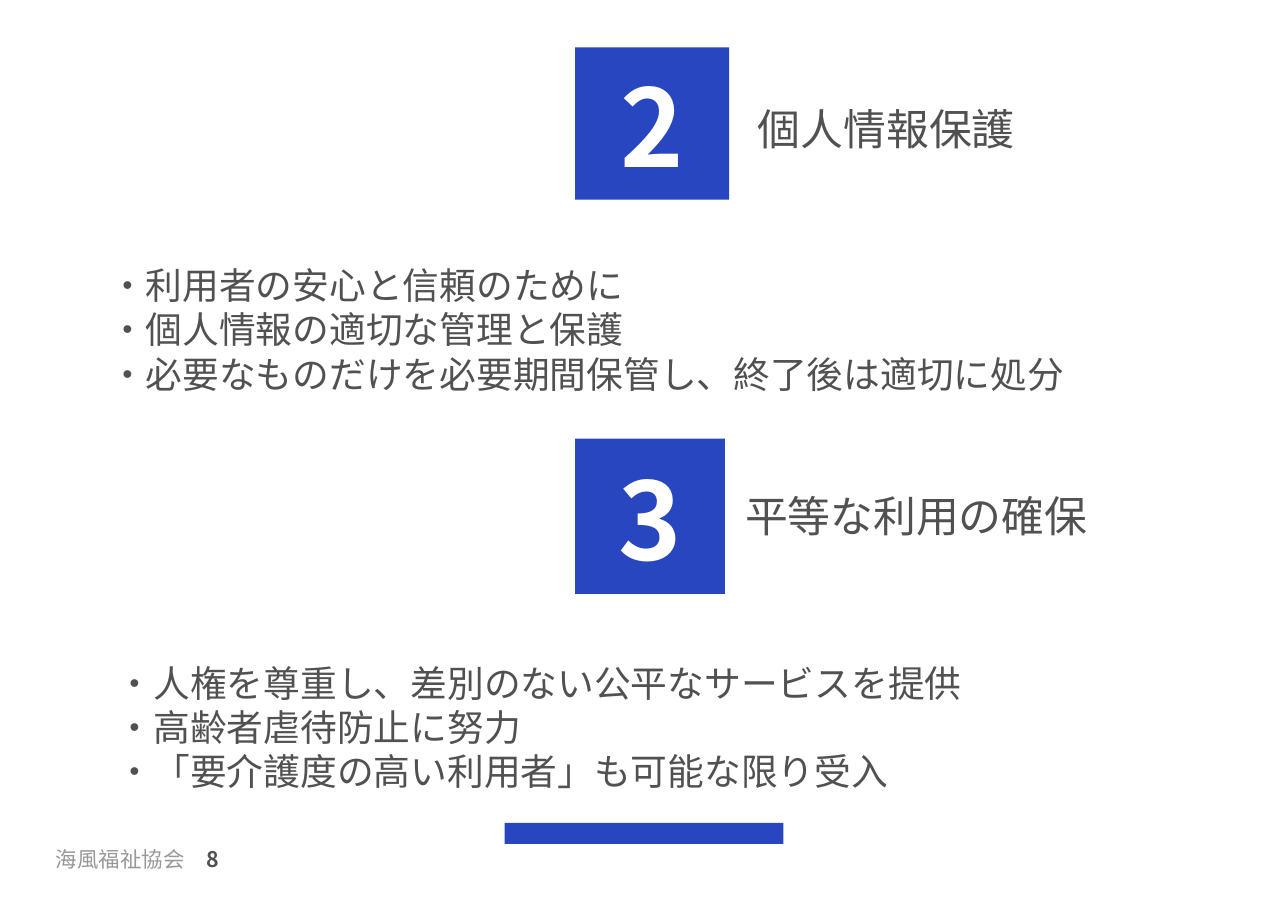
from dataclasses import dataclass

from lxml import etree
from pptx import Presentation
from pptx.dml.color import RGBColor
from pptx.enum.shapes import MSO_SHAPE
from pptx.enum.text import MSO_ANCHOR, MSO_AUTO_SIZE, PP_ALIGN
from pptx.oxml.ns import qn
from pptx.util import Pt

RECTANGLE = MSO_SHAPE.RECTANGLE
MIDDLE = MSO_ANCHOR.MIDDLE
NO_AUTOFIT = MSO_AUTO_SIZE.NONE
LEFT, CENTER = PP_ALIGN.LEFT, PP_ALIGN.CENTER


@dataclass(frozen=True)
class Theme:
    font: str = "Noto Sans CJK JP"
    blue: RGBColor = RGBColor(0x27, 0x46, 0xC0)
    ink: RGBColor = RGBColor(0x51, 0x51, 0x51)
    grey: RGBColor = RGBColor(0x98, 0x98, 0x98)
    white: RGBColor = RGBColor(0xFF, 0xFF, 0xFF)
    number_size: float = 70.2
    heading_size: float = 28
    list_size: float = 24
    footer_size: float = 14


THEME = Theme()


def write(paragraph, text, size, color, bold=False):
    """Add one run, with the font set for Latin and Japanese text alike."""
    run = paragraph.add_run()
    run.text = text
    run.font.size = Pt(size)
    run.font.bold = bold
    run.font.color.rgb = color
    run.font.name = THEME.font
    etree.SubElement(run.font._element, qn("a:ea"), typeface=THEME.font)


def place(shape, box, insets):
    """Move a shape to its box and centre its text vertically."""
    shape.left, shape.top, shape.width, shape.height = map(Pt, box)
    frame = shape.text_frame
    frame.word_wrap = True
    frame.auto_size = NO_AUTOFIT
    frame.vertical_anchor = MIDDLE
    (frame.margin_left, frame.margin_top,
     frame.margin_right, frame.margin_bottom) = map(Pt, insets)
    return frame


TEXT_INSETS = (7.2, 5, 7.2, 3.6)
NUMBER_INSETS = (6.5, 15.1, 6.5, 2.9)

# Heading and list give the placeholder index followed by the box.
sections = [
    dict(number="2", square=(375.8, 31, 100.8, 99.4),
         heading="個人情報保護", heading_at=(0, (455, 59.8, 248.4, 51)),
         points=["・利用者の安心と信頼のために",
                 "・個人情報の適切な管理と保護",
                 "・必要なものだけを必要期間保管し、終了後は適切に処分"],
         points_at=(2, (64.1, 150.5, 743, 128))),
    dict(number="3", square=(375.8, 286.6, 97.9, 101.5),
         heading="平等な利用の確保", heading_at=(3, (474.5, 316.8, 248.4, 43.2)),
         points=["・人権を尊重し、差別のない公平なサービスを提供",
                 "・高齢者虐待防止に努力",
                 "・「要介護度の高い利用者」も可能な限り受入"],
         points_at=(4, (69.1, 419, 720, 111))),
]

deck = Presentation()
deck.slide_width, deck.slide_height = Pt(841.7), Pt(595.4)
comparison_layout = deck.slide_layouts[4]
slide = deck.slides.add_slide(comparison_layout)
placeholders = {p.placeholder_format.idx: p for p in slide.placeholders}

spare_heading = placeholders[1].element
spare_heading.getparent().remove(spare_heading)

for section in sections:
    square = slide.shapes.add_shape(RECTANGLE, *map(Pt, section["square"]))
    square.shadow.inherit = False
    square.fill.solid()
    square.fill.fore_color.rgb = THEME.blue
    square.line.fill.background()
    number = place(square, section["square"], NUMBER_INSETS).paragraphs[0]
    number.alignment = CENTER
    number.line_spacing = 0.9
    write(number, section["number"], THEME.number_size, THEME.white, bold=True)

    for (index, box), lines, size, alignment, spacing in (
        (section["heading_at"], [section["heading"]], THEME.heading_size, CENTER, 0.9),
        (section["points_at"], section["points"], THEME.list_size, LEFT, 1.0),
    ):
        frame = place(placeholders[index], box, TEXT_INSETS)
        for position, line in enumerate(lines):
            paragraph = frame.add_paragraph() if position else frame.paragraphs[0]
            paragraph.alignment = alignment
            paragraph.line_spacing = spacing
            paragraph.space_before = paragraph.space_after = Pt(0)
            properties = paragraph._p.get_or_add_pPr()
            properties.set("marL", "0")
            properties.set("indent", "0")
            etree.SubElement(properties, qn("a:buNone"))
            write(paragraph, line, size, THEME.ink)

accent_bar = slide.shapes.add_shape(RECTANGLE, Pt(329.8), Pt(537.8), Pt(182.2), Pt(13.7))
accent_bar.shadow.inherit = False
accent_bar.fill.solid()
accent_bar.fill.fore_color.rgb = THEME.blue
accent_bar.line.fill.background()

footer_box = (29.5, 545.8, 248.4, 31.7)
footer = place(slide.shapes.add_textbox(*map(Pt, footer_box)), footer_box,
               (7.2, 3.6, 7.2, 3.6)).paragraphs[0]
write(footer, "海風福祉協会　", THEME.footer_size, THEME.grey)
write(footer, "8", THEME.footer_size, THEME.ink, bold=True)

deck.save("out.pptx")
